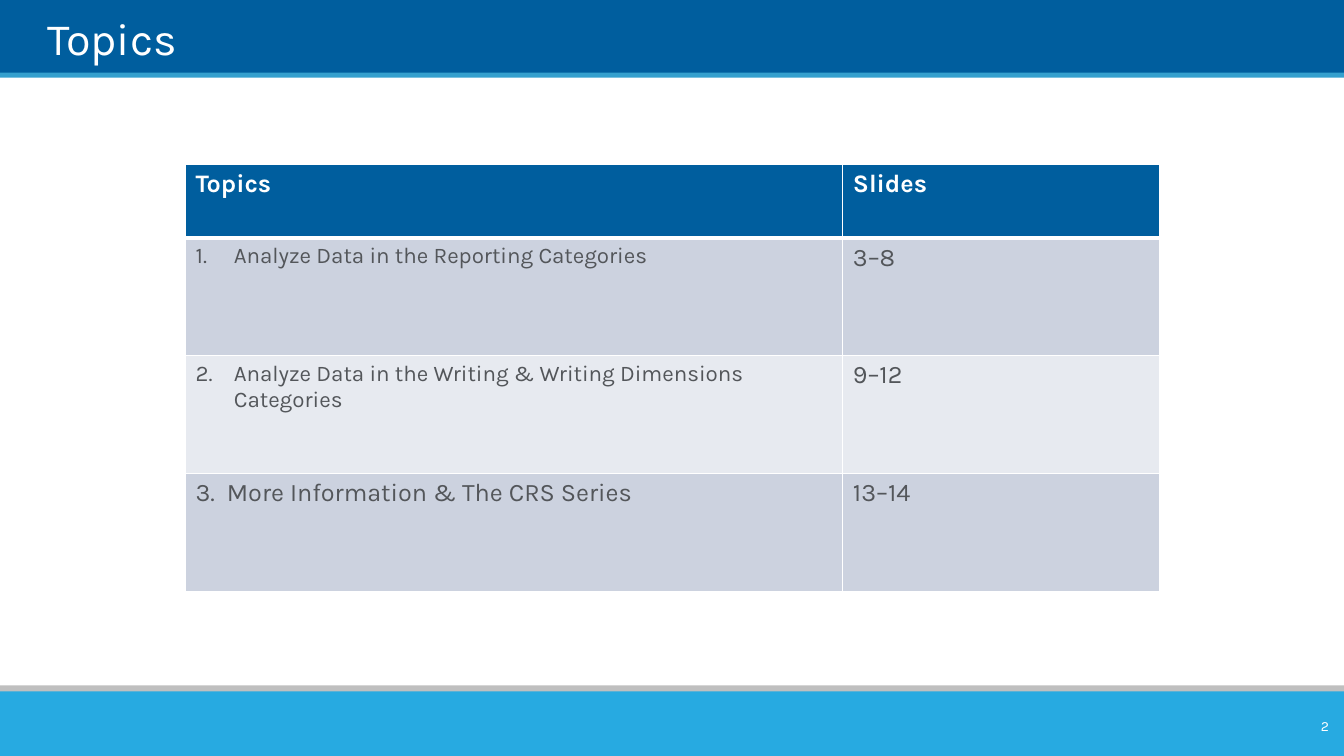
from dataclasses import dataclass

from lxml import etree
from pptx import Presentation
from pptx.dml.color import RGBColor
from pptx.enum.shapes import MSO_SHAPE
from pptx.enum.text import MSO_ANCHOR, PP_ALIGN
from pptx.oxml.ns import qn
from pptx.util import Inches, Pt

RECTANGLE = MSO_SHAPE.RECTANGLE
TOP, MIDDLE, BOTTOM = MSO_ANCHOR.TOP, MSO_ANCHOR.MIDDLE, MSO_ANCHOR.BOTTOM
LEFT, RIGHT = PP_ALIGN.LEFT, PP_ALIGN.RIGHT


@dataclass(frozen=True)
class Theme:
    font: str = "Karla"
    navy: str = "005E9E"
    blue: str = "35A0CE"
    sky: str = "27AAE1"
    grey: str = "BFBFBF"
    white: str = "FFFFFF"
    ink: str = "53565A"
    bands: tuple = ("CCD2DF", "E7EAF0")
    title_size: int = 32
    table_size: int = 18
    numbered_size: int = 16
    page_size: int = 10
    thin: float = 1
    thick: float = 3


THEME = Theme()
WIDTH, HEIGHT = 13.33, 7.5

TITLE = "Topics"
PAGE_NUMBER = "2"
HEADER = ("Topics", "Slides")
TOPICS = [
    (1, "Analyze Data in the Reporting Categories", "3–8"),
    (2, "Analyze Data in the Writing & Writing Dimensions Categories", "9–12"),
    (None, "3.  More Information & The CRS Series", "13–14"),
]

BARS = [
    (-0.01, 0.75, THEME.navy),
    (0.72, 0.05, THEME.blue),
    (6.8, 0.14, THEME.grey),
    (6.86, 0.64, THEME.sky),
]
TITLE_PLACE = (0.47, 0.07, 12.43, 0.57)
NUMBER_PLACE = (12.51, 7.05, 0.77, 0.3)
TABLE_LEFT, TABLE_TOP = 1.84, 1.63
COLUMNS = (6.52, 3.14)
HEADER_HEIGHT, TOPIC_HEIGHT = 0.73, 1.17
NUMBER_INDENT = 0.38


def place(shape, left, top, width, height):
    shape.left, shape.top = Inches(left), Inches(top)
    shape.width, shape.height = Inches(width), Inches(height)


def write(para, text, size, color, bold=False, align=LEFT):
    para.alignment = align
    span = para.add_run()
    span.text = text
    font = span.font
    font.name, font.size, font.bold = THEME.font, Pt(size), bold
    font.color.rgb = RGBColor.from_string(color)


def number(para, start):
    properties = para._p.get_or_add_pPr()
    indent = Inches(NUMBER_INDENT)
    properties.set("marL", str(indent))
    properties.set("indent", str(-indent))
    bullet = etree.SubElement(properties, qn("a:buAutoNum"), type="arabicPeriod")
    bullet.set("startAt", str(start))


def border(cell, widths):
    properties = cell._tc.get_or_add_tcPr()
    for position, (side, width) in enumerate(widths.items()):
        line = etree.Element(qn(f"a:ln{side}"), w=str(Pt(width)))
        fill = etree.SubElement(line, qn("a:solidFill"))
        etree.SubElement(fill, qn("a:srgbClr"), val=THEME.white)
        properties.insert(position, line)


def add_bars(page):
    for top, height, color in BARS:
        bar = page.shapes.add_shape(
            RECTANGLE, 0, Inches(top), Inches(WIDTH), Inches(height))
        bar.shadow.inherit = False
        bar.fill.solid()
        bar.fill.fore_color.rgb = RGBColor.from_string(color)
        bar.line.fill.background()


def add_title(page):
    title = page.shapes.title
    place(title, *TITLE_PLACE)
    frame = title.text_frame
    frame.word_wrap = True
    frame.vertical_anchor = BOTTOM
    frame.margin_left = frame.margin_right = 0
    frame.margin_top = frame.margin_bottom = 0
    write(frame.paragraphs[0], TITLE, THEME.title_size, THEME.white)
    page.shapes._spTree.append(title._element)


def add_page_number(page):
    box = page.shapes.add_textbox(*map(Inches, NUMBER_PLACE))
    frame = box.text_frame
    frame.word_wrap = True
    frame.vertical_anchor = MIDDLE
    write(frame.paragraphs[0], PAGE_NUMBER, THEME.page_size, THEME.white, align=RIGHT)


def fill_cell(cell, text, row, start=None):
    heading = row == 0
    cell.vertical_anchor = TOP
    cell.fill.solid()
    color = THEME.navy if heading else THEME.bands[(row - 1) % 2]
    cell.fill.fore_color.rgb = RGBColor.from_string(color)
    border(cell, {
        "L": THEME.thin,
        "R": THEME.thin,
        "T": THEME.thick if row == 1 else THEME.thin,
        "B": THEME.thick if heading else THEME.thin,
    })
    para = cell.text_frame.paragraphs[0]
    if start:
        number(para, start)
    size = THEME.numbered_size if start else THEME.table_size
    write(para, text, size, THEME.white if heading else THEME.ink, heading)


def add_topics(page):
    heights = [HEADER_HEIGHT] + [TOPIC_HEIGHT] * len(TOPICS)
    table = page.shapes.add_table(
        len(heights), len(COLUMNS), Inches(TABLE_LEFT), Inches(TABLE_TOP),
        Inches(sum(COLUMNS)), Inches(sum(heights))).table
    for column, width in zip(table.columns, COLUMNS):
        column.width = Inches(width)
    for row, height in zip(table.rows, heights):
        row.height = Inches(height)
    for row, (start, topic, slides) in enumerate([(None, *HEADER), *TOPICS]):
        fill_cell(table.cell(row, 0), topic, row, start)
        fill_cell(table.cell(row, 1), slides, row)


def main():
    deck = Presentation()
    deck.slide_width, deck.slide_height = Inches(WIDTH), Inches(HEIGHT)
    page = deck.slides.add_slide(deck.slide_layouts.get_by_name("Title Only"))
    add_bars(page)
    add_page_number(page)
    add_title(page)
    add_topics(page)
    deck.save("out.pptx")


if __name__ == "__main__":
    main()
